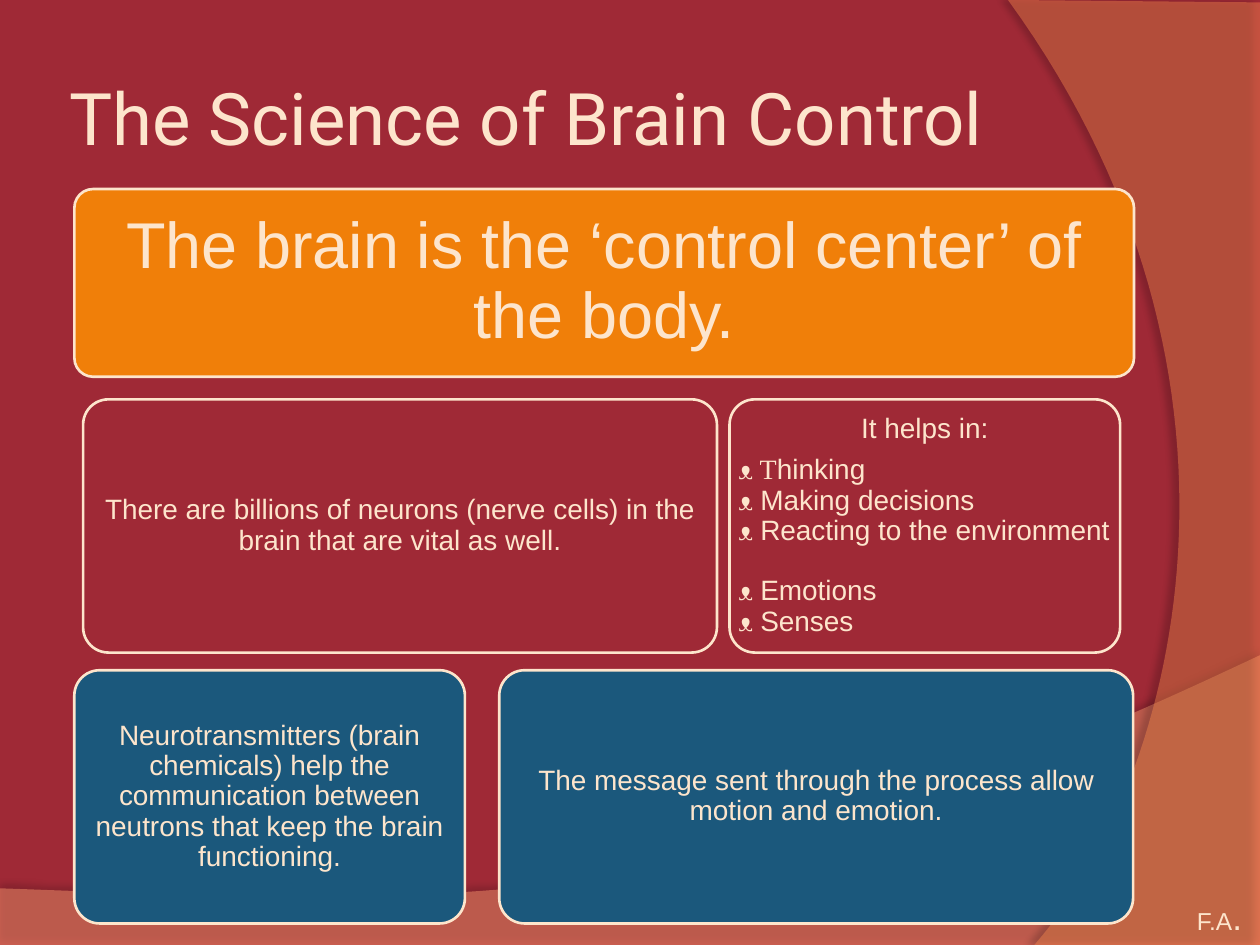
"""Build the brain control slide."""
from dataclasses import dataclass

from lxml.etree import SubElement
from pptx import Presentation
from pptx.dml.color import RGBColor
from pptx.enum.shapes import MSO_SHAPE
from pptx.enum.text import MSO_ANCHOR, MSO_AUTO_SIZE, PP_ALIGN
from pptx.oxml.ns import qn
from pptx.util import Pt

Point = tuple[float, float]


@dataclass(frozen=True)
class Theme:
    """Colours, fonts and type sizes."""
    back: str = "9F2936"
    cream: str = "FDE5CC"
    orange: str = "F07F09"
    blue: str = "1B587C"
    peach: str = "FF9F73"
    coral: str = "FF8F50"
    font: str = "Arial"
    head: str = "Roboto"
    serif: str = "Times New Roman"
    title: float = 41.4
    hero: float = 37
    body: float = 16
    small: float = 14
    dot: float = 20


@dataclass(frozen=True)
class Card:
    """A rounded box with its words."""
    left: float
    top: float
    width: float
    height: float
    fill: str
    text: str
    size: float
    inset: float = 5


@dataclass(frozen=True)
class Wave:
    """A see-through shape with one curved edge and a shadow."""
    lines: tuple[Point, ...]
    curve: tuple[Point, Point, Point]
    fill: str
    alpha: int
    shade: int
    dist: float
    angle: int


LOOK = Theme()
ROUND = 0.1
LEFT, FULL, TALL = 42.5, 605.5, 144.7
SLIM, WIDE = 223.2, 362.2
ROW, LAST = 228.2, 383
LIST = ("Thinking", "Making decisions", "Reacting to the environment ",
        "Emotions", "Senses")

WAVES = (
    Wave(((0, 507.6), (0, 540.7), (720, 540.7), (720, 374.4)),
         ((402.5, 524.9), (281.5, 517.7), (0, 507.6)),
         LOOK.peach, 45, 35, 3.5, 270),
    Wave(((576, 0), (720, 1.4), (720, 540), (591.1, 540)),
         ((673.2, 445.7), (733, 216), (576, 0)),
         LOOK.coral, 40, 45, 4, 180),
)

HELP = Card(416.9, ROW, SLIM, TALL, LOOK.back, "It helps in:", LOOK.body)
CARDS = (
    Card(LEFT, 108, FULL, 107.3, LOOK.orange,
         "The brain is the ‘control center’ of the body.", LOOK.hero, 10.8),
    HELP,
    Card(LEFT, LAST, SLIM, TALL, LOOK.blue,
         "Neurotransmitters (brain chemicals) help the communication between "
         "neutrons that keep the brain functioning.", LOOK.body),
    Card(47.5, ROW, WIDE, TALL, LOOK.back,
         "There are billions of neurons (nerve cells) in the brain that are "
         "vital as well.", LOOK.body),
    Card(285.3, LAST, WIDE, TALL, LOOK.blue,
         "The message sent through the process allow motion and emotion.",
         LOOK.body),
)


def paint(run, size: float, font: str = LOOK.font) -> None:
    """Set the face, size and colour of a run."""
    run.font.name = font
    run.font.size = Pt(size)
    run.font.color.rgb = RGBColor.from_string(LOOK.cream)


def pad(frame, inset: float) -> None:
    """Give a text frame equal margins and centre it in height."""
    frame.margin_left = frame.margin_right = Pt(inset)
    frame.margin_top = frame.margin_bottom = Pt(inset)
    frame.vertical_anchor = MSO_ANCHOR.MIDDLE
    frame.word_wrap = True


def space(para, align: PP_ALIGN, size: float) -> None:
    """Set the align and gaps of a paragraph."""
    para.alignment = align
    para.line_spacing = 0.9
    para.space_after = Pt(round(size * 0.39, 1))


def trace(start: Point, curve: tuple[Point, Point, Point],
          steps: int = 60) -> list[Point]:
    """Return points along a cubic curve."""
    ends = (start, *curve)
    spots = []
    for step in range(1, steps + 1):
        t = step / steps
        parts = ((1 - t) ** 3, 3 * t * (1 - t) ** 2,
                 3 * t * t * (1 - t), t ** 3)
        spots.append(tuple(sum(w * p[axis] for w, p in zip(parts, ends))
                           for axis in (0, 1)))
    return spots


def draw_wave(slide, wave: Wave) -> None:
    """Draw one curved shape of the backdrop."""
    spots = [*wave.lines[1:], *trace(wave.lines[-1], wave.curve)]
    first = wave.lines[0]
    build = slide.shapes.build_freeform(Pt(first[0]), Pt(first[1]))
    build.add_line_segments([(Pt(x), Pt(y)) for x, y in spots], close=True)
    shape = build.convert_to_shape()
    shape.fill.solid()
    shape.fill.fore_color.rgb = RGBColor.from_string(wave.fill)
    shape.line.fill.background()
    shape.shadow.inherit = False
    props = shape.element.spPr
    tint = props.find(qn("a:solidFill"))[0]
    SubElement(tint, qn("a:alpha"), val=str(wave.alpha * 1000))
    shade = SubElement(props.find(qn("a:effectLst")), qn("a:outerShdw"),
                       blurRad=str(Pt(4)), dist=str(Pt(wave.dist)),
                       dir=str(wave.angle * 60000), rotWithShape="0")
    black = SubElement(shade, qn("a:srgbClr"), val="000000")
    SubElement(black, qn("a:alpha"), val=str(wave.shade * 1000))


def draw_card(slide, card: Card):
    """Draw a rounded box and return its text frame."""
    shape = slide.shapes.add_shape(
        MSO_SHAPE.ROUNDED_RECTANGLE, Pt(card.left), Pt(card.top),
        Pt(card.width), Pt(card.height))
    shape.adjustments[0] = ROUND
    shape.shadow.inherit = False
    shape.fill.solid()
    shape.fill.fore_color.rgb = RGBColor.from_string(card.fill)
    shape.line.color.rgb = RGBColor.from_string(LOOK.cream)
    shape.line.width = Pt(1.5)
    frame = shape.text_frame
    pad(frame, round(card.inset - 0.29 * ROUND * card.height, 1))
    frame.text = card.text
    para = frame.paragraphs[0]
    space(para, PP_ALIGN.CENTER, card.size)
    paint(para.runs[0], card.size)
    return frame


def add_list(frame, items: tuple[str, ...], size: float) -> None:
    """Add marked lines to a frame as one paragraph."""
    para = frame.add_paragraph()
    space(para, PP_ALIGN.LEFT, size)
    for place, item in enumerate(items):
        if place:
            para.add_line_break()
        cut = 0 if place else 1
        for text, font in (("ᴥ " + item[:cut], LOOK.serif),
                           (item[cut:], LOOK.font)):
            run = para.add_run()
            run.text = text
            paint(run, size, font)
    for gap in frame._txBody.iter(qn("a:br")):
        SubElement(gap, qn("a:rPr"), sz=str(int(size * 100)))


def draw_title(slide, text: str) -> None:
    """Place the title above the backdrop."""
    title = slide.shapes.title
    title.left, title.top = Pt(36), Pt(21.6)
    title.width, title.height = Pt(588.2), Pt(90)
    frame = title.text_frame
    pad(frame, 3.6)
    frame.auto_size = MSO_AUTO_SIZE.NONE
    frame.text = text
    frame.paragraphs[0].alignment = PP_ALIGN.LEFT
    paint(frame.paragraphs[0].runs[0], LOOK.title, LOOK.head)
    slide.shapes.element.append(title.element)


def draw_mark(slide) -> None:
    """Write the initials in the corner."""
    box = slide.shapes.add_textbox(Pt(676.8), Pt(508.3), Pt(87.1), Pt(31.7))
    frame = box.text_frame
    frame.word_wrap = True
    para = frame.paragraphs[0]
    for text, size in (("F.A", LOOK.small), (".", LOOK.dot)):
        run = para.add_run()
        run.text = text
        paint(run, size)


def main() -> None:
    """Build and save the slide."""
    deck = Presentation()
    deck.slide_width, deck.slide_height = Pt(720), Pt(540)
    slide = deck.slides.add_slide(deck.slide_layouts[5])
    fill = slide.background.fill
    fill.solid()
    fill.fore_color.rgb = RGBColor.from_string(LOOK.back)
    for wave in WAVES:
        draw_wave(slide, wave)
    draw_title(slide, "The Science of Brain Control")
    for card in CARDS:
        frame = draw_card(slide, card)
        if card is HELP:
            add_list(frame, LIST, card.size)
    draw_mark(slide)
    deck.save("out.pptx")


if __name__ == "__main__":
    main()
